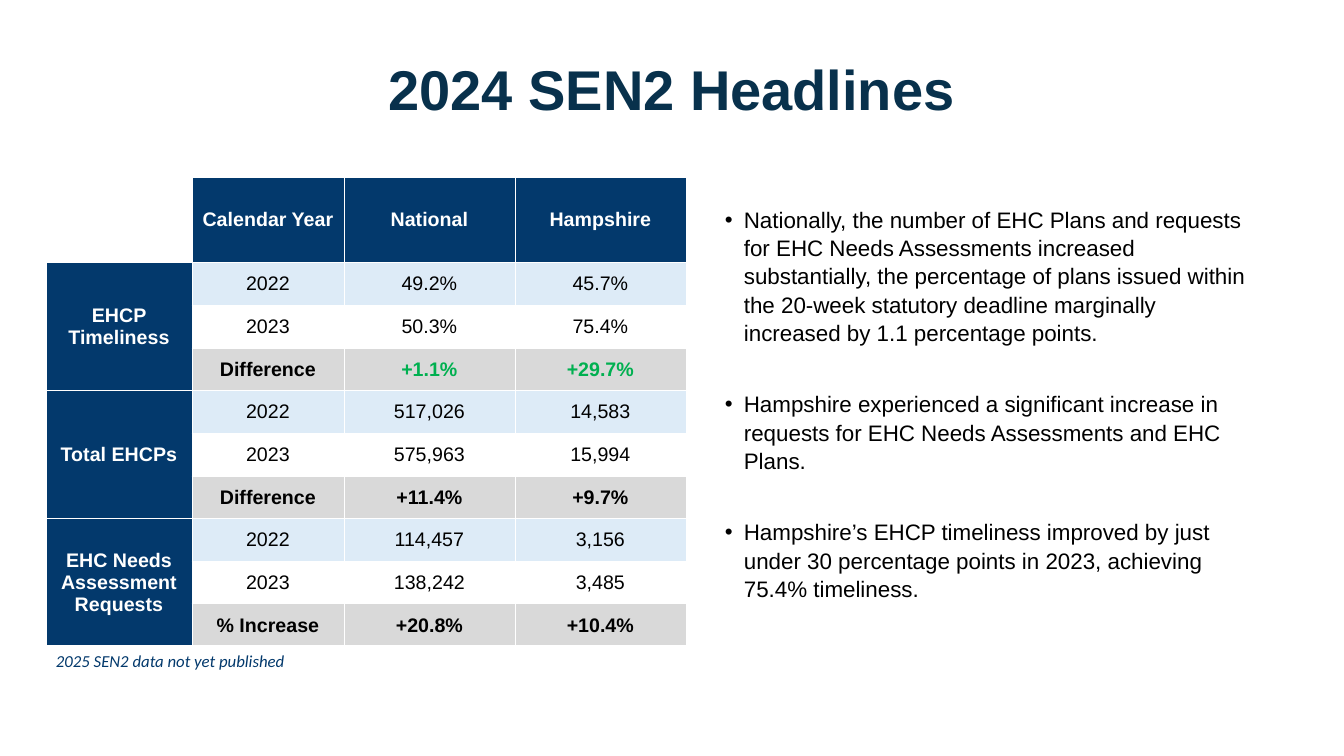
"""Build the 2024 SEN2 headlines slide."""
from lxml import etree
from pptx import Presentation
from pptx.dml.color import RGBColor
from pptx.enum.text import MSO_ANCHOR, PP_ALIGN
from pptx.oxml.ns import qn
from pptx.util import Emu, Pt

MIDDLE, TOP = MSO_ANCHOR.MIDDLE, MSO_ANCHOR.TOP
CENTER, LEFT = PP_ALIGN.CENTER, PP_ALIGN.LEFT
TITLE_BLUE = RGBColor(0x08, 0x31, 0x4C)
NAVY = RGBColor(0x03, 0x39, 0x6C)
PALE_BLUE = RGBColor(0xDD, 0xEB, 0xF7)
GREY = RGBColor(0xD9, 0xD9, 0xD9)
GREEN = RGBColor(0x00, 0xB0, 0x50)
WHITE = RGBColor(0xFF, 0xFF, 0xFF)
BLACK = RGBColor(0x00, 0x00, 0x00)

COLUMN_WIDTHS = (146, 152, 171, 171)
HEADER_HEIGHT = 85
GROUP_HEIGHTS = (43, 43, 42)
GROUP_FILLS = (PALE_BLUE, None, GREY)
HEADERS = ("Calendar Year", "National", "Hampshire")
GROUPS = (
    ("EHCP Timeliness", GREEN, (
        ("2022", "49.2%", "45.7%"),
        ("2023", "50.3%", "75.4%"),
        ("Difference", "+1.1%", "+29.7%"))),
    ("Total EHCPs", BLACK, (
        ("2022", "517,026", "14,583"),
        ("2023", "575,963", "15,994"),
        ("Difference", "+11.4%", "+9.7%"))),
    ("EHC Needs Assessment Requests", BLACK, (
        ("2022", "114,457", "3,156"),
        ("2023", "138,242", "3,485"),
        ("% Increase", "+20.8%", "+10.4%"))),
)
FINDINGS = (
    "Nationally, the number of EHC Plans and requests for EHC Needs Assessments "
    "increased substantially, the percentage of plans issued within the 20-week "
    "statutory deadline marginally increased by 1.1 percentage points.",
    "Hampshire experienced a significant increase in requests for EHC Needs "
    "Assessments and EHC Plans.",
    "Hampshire’s EHCP timeliness improved by just under 30 percentage points in "
    "2023, achieving 75.4% timeliness.",
)


def px(length):
    """Turn pixels into EMU."""
    return Emu(round(length * 914400 / 100.8))


def add_bullet(paragraph, indent=19):
    """Give a paragraph a hanging bullet."""
    properties = paragraph._p.get_or_add_pPr()
    properties.set("marL", str(px(indent)))
    properties.set("indent", str(-px(indent)))
    etree.SubElement(properties, qn("a:buFont"), typeface="Arial")
    etree.SubElement(properties, qn("a:buChar"), char="•")


def write_text(frame, *texts, size, color, font="Arial", bold=False, italic=False,
               align=LEFT, line_spacing=None, space_after=0, bullet=False):
    """Write each text as a formatted paragraph of the frame."""
    for index, text in enumerate(texts):
        paragraph = frame.add_paragraph() if index else frame.paragraphs[0]
        if bullet:
            add_bullet(paragraph)
        paragraph.alignment = align
        paragraph.line_spacing = line_spacing
        paragraph.space_after = Pt(space_after)
        run = paragraph.add_run()
        run.text = text
        run.font.name = font
        run.font.size = Pt(size)
        run.font.bold = bold
        run.font.italic = italic
        run.font.color.rgb = color


def add_text_box(slide, left, top, width, height, *texts, anchor=TOP, **text_format):
    """Add a wrapped text box."""
    box = slide.shapes.add_textbox(px(left), px(top), px(width), px(height))
    frame = box.text_frame
    frame.word_wrap = True
    frame.vertical_anchor = anchor
    write_text(frame, *texts, **text_format)


def style_cell(cell, fill):
    """Give a cell thin white borders, narrow margins and its fill."""
    properties = cell._tc.get_or_add_tcPr()
    for side in ("lnL", "lnR", "lnT", "lnB"):
        border = etree.SubElement(properties, qn(f"a:{side}"), w=str(Pt(0.5)))
        solid = etree.SubElement(border, qn("a:solidFill"))
        etree.SubElement(solid, qn("a:srgbClr"), val=str(WHITE))
    cell.margin_left = cell.margin_right = cell.margin_top = px(1)
    cell.margin_bottom = 0
    cell.vertical_anchor = MIDDLE
    if fill is None:
        cell.fill.background()
    else:
        cell.fill.solid()
        cell.fill.fore_color.rgb = fill


def write_cell(cell, text, color=WHITE, bold=True):
    """Write centred text into a table cell."""
    write_text(cell.text_frame, text, size=14, color=color, bold=bold, align=CENTER)


def add_headline_table(slide, left, top):
    """Add the table of yearly figures in three groups."""
    heights = (HEADER_HEIGHT,) + GROUP_HEIGHTS * len(GROUPS)
    table = slide.shapes.add_table(
        len(heights), len(COLUMN_WIDTHS), px(left), px(top),
        px(sum(COLUMN_WIDTHS)), px(sum(heights))).table
    table.first_row = table.horz_banding = False
    for column, width in zip(table.columns, COLUMN_WIDTHS):
        column.width = px(width)
    for row, height in zip(table.rows, heights):
        row.height = px(height)
    style_cell(table.cell(0, 0), None)
    for column, header in enumerate(HEADERS, 1):
        style_cell(table.cell(0, column), NAVY)
        write_cell(table.cell(0, column), header)
    for group, (name, change_color, records) in enumerate(GROUPS):
        first = 1 + group * len(records)
        for row, (record, fill) in enumerate(zip(records, GROUP_FILLS), first):
            style_cell(table.cell(row, 0), NAVY)
            is_change = fill == GREY
            for column, value in enumerate(record, 1):
                color = change_color if is_change and column > 1 else BLACK
                style_cell(table.cell(row, column), fill)
                write_cell(table.cell(row, column), value, color, is_change)
        table.cell(first, 0).merge(table.cell(first + len(records) - 1, 0))
        write_cell(table.cell(first, 0), name)


def main():
    """Build and save the slide."""
    presentation = Presentation()
    presentation.slide_width, presentation.slide_height = px(1344), px(756)
    slide = presentation.slides.add_slide(presentation.slide_layouts[6])
    add_text_box(slide, 92, 40, 1159, 104, "2024 SEN2 Headlines", anchor=MIDDLE,
                 size=40, color=TITLE_BLUE, bold=True, align=CENTER, line_spacing=0.9)
    add_headline_table(slide, 46, 177)
    add_text_box(slide, 715, 200, 552, 397, *FINDINGS, size=16, color=BLACK,
                 line_spacing=1.05, space_after=31, bullet=True)
    add_text_box(slide, 46, 646, 427, 30, "2025 SEN2 data not yet published",
                 size=12, color=NAVY, font="Calibri", italic=True)
    presentation.save("out.pptx")


if __name__ == "__main__":
    main()
